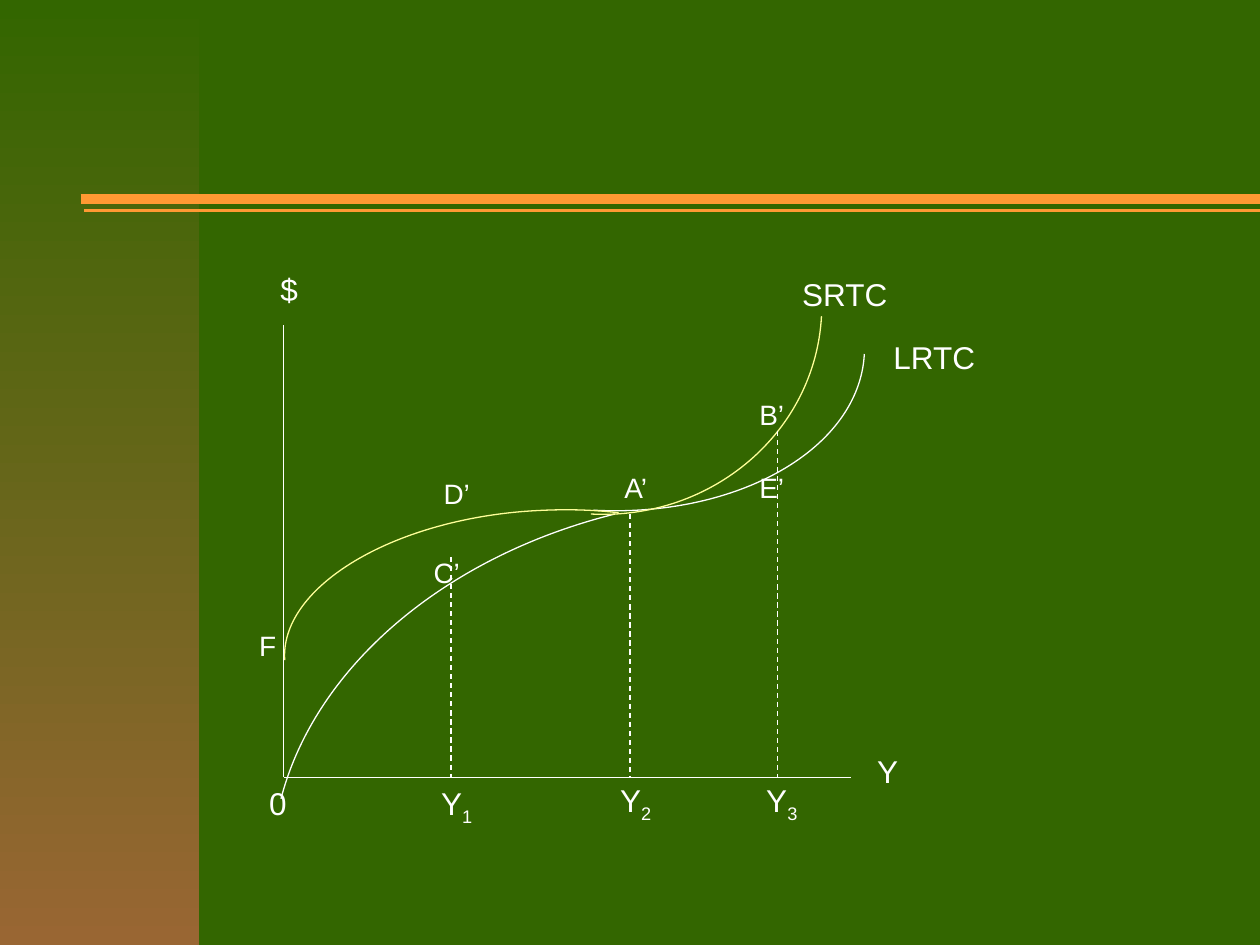
import pptx
import pptx.util
import pptx.dml.color
import pptx.enum.dml
import pptx.enum.shapes
import pptx.enum.text
import pptx.oxml.ns
import lxml.etree

Inches = pptx.util.Inches
Pt = pptx.util.Pt
RGBColor = pptx.dml.color.RGBColor
qn = pptx.oxml.ns.qn

GREEN = RGBColor(0x33, 0x66, 0x00)
BROWN = RGBColor(0x99, 0x66, 0x33)
ORANGE = RGBColor(0xFF, 0x99, 0x33)
WHITE = RGBColor(0xFF, 0xFF, 0xFF)
YELLOW = RGBColor(0xFF, 0xFF, 0x99)


def add_line(s, x1, y1, x2, y2, color, width, dashed=False):
    line = s.shapes.add_connector(
        pptx.enum.shapes.MSO_CONNECTOR.STRAIGHT,
        Inches(x1), Inches(y1), Inches(x2), Inches(y2))
    line.line.color.rgb = color
    line.line.width = Pt(width)
    if dashed:
        line.line.dash_style = pptx.enum.dml.MSO_LINE.DASH
    lxml.etree.SubElement(line._element.spPr, qn("a:effectLst"))


def add_curve(s, points, color):
    start, *controls = [(Inches(x), Inches(y)) for x, y in points]
    builder = s.shapes.build_freeform(*start)
    builder.add_line_segments(controls, close=False)
    sp = builder.convert_to_shape()
    sp.shadow.inherit = False
    sp.fill.background()
    sp.line.color.rgb = color
    sp.line.width = Pt(0.75)
    segments = list(sp._element.iter(qn("a:lnTo")))
    for i in range(0, len(segments), 3):
        bezier = lxml.etree.Element(qn("a:cubicBezTo"))
        segments[i].addprevious(bezier)
        for segment in segments[i:i + 3]:
            bezier.append(segment[0])
            segment.getparent().remove(segment)


prs = pptx.Presentation()
prs.slide_width = Inches(10)
prs.slide_height = Inches(7.5)
s = prs.slides.add_slide(prs.slide_layouts[6])
s.background.fill.solid()
s.background.fill.fore_color.rgb = GREEN

band = s.shapes.add_shape(pptx.enum.shapes.MSO_SHAPE.RECTANGLE,
                          0, 0, Inches(1.58), Inches(7.5))
band.shadow.inherit = False
band.line.fill.background()
band.fill.gradient()
band.fill.gradient_angle = 270
for stop, color in zip(band.fill.gradient_stops, (GREEN, BROWN)):
    stop.color.rgb = color

for x, y, width in ((0.67, 1.67, 2), (0.64, 1.58, 6)):
    add_line(s, x, y, 10, y, ORANGE, width)

add_line(s, 2.25, 2.58, 2.25, 6.17, WHITE, 0.75)
add_line(s, 2.25, 6.17, 6.75, 6.17, WHITE, 0.75)

curves = [
    (WHITE, [(4.88, 4.08), (3.52, 4.42), (2.5, 5.3), (2.23, 6.34)]),
    (WHITE, [(6.86, 2.81), (6.82, 3.56), (5.86, 4.11), (4.71, 4.05)]),
    (YELLOW, [(4.91, 4.07), (4.66, 4.04), (4.41, 4.04), (4.15, 4.06),
              (3.06, 4.15), (2.22, 4.68), (2.26, 5.24)]),
    (YELLOW, [(6.52, 2.51), (6.47, 3.43), (5.65, 4.13), (4.69, 4.08)]),
]
for color, points in curves:
    add_curve(s, points, color)

for x, top in ((5, 4.08), (3.58, 4.42), (6.17, 3.42)):
    add_line(s, x, top, x, 6.17, WHITE, 0.75, dashed=True)

labels = [
    ("SRTC", "", 6.08, 2, 1.25, 0.67, 18),
    ("LRTC", "", 6.75, 2.5, 1.33, 0.67, 18),
    ("$", "", 1.92, 2, 0.75, 0.58, 18),
    ("Y", "", 6.67, 5.83, 0.75, 0.58, 18),
    ("C’", "", 3.17, 4, 0.75, 1.08, 16),
    ("B’", "", 5.75, 3, 0.75, 0.58, 16),
    ("A’", "", 4.67, 3.58, 0.75, 0.58, 16),
    ("D’", "", 3.25, 3.58, 0.75, 0.67, 16),
    ("E’", "", 5.75, 3.58, 0.75, 0.58, 16),
    ("Y", "3", 5.83, 6.08, 0.75, 0.58, 18),
    ("Y", "2", 4.67, 6.08, 0.75, 0.58, 18),
    ("F", "", 1.75, 4.83, 0.75, 0.58, 16),
    ("Y", "1", 3.25, 6.1, 0.75, 0.58, 18),
    ("0", "", 1.83, 6.08, 0.75, 0.58, 18),
]
for text, subscript, x, y, w, h, size in labels:
    tf = s.shapes.add_textbox(Inches(x), Inches(y), Inches(w), Inches(h)).text_frame
    tf.word_wrap = False
    tf.vertical_anchor = pptx.enum.text.MSO_ANCHOR.MIDDLE
    p = tf.paragraphs[0]
    p.alignment = pptx.enum.text.PP_ALIGN.CENTER
    p.font.name = "Arial"
    p.font.size = Pt(size)
    p.font.color.rgb = WHITE
    p.add_run().text = text
    if subscript:
        r = p.add_run()
        r.text = subscript
        r.font._element.set("baseline", "-25000")

prs.save("out.pptx")
